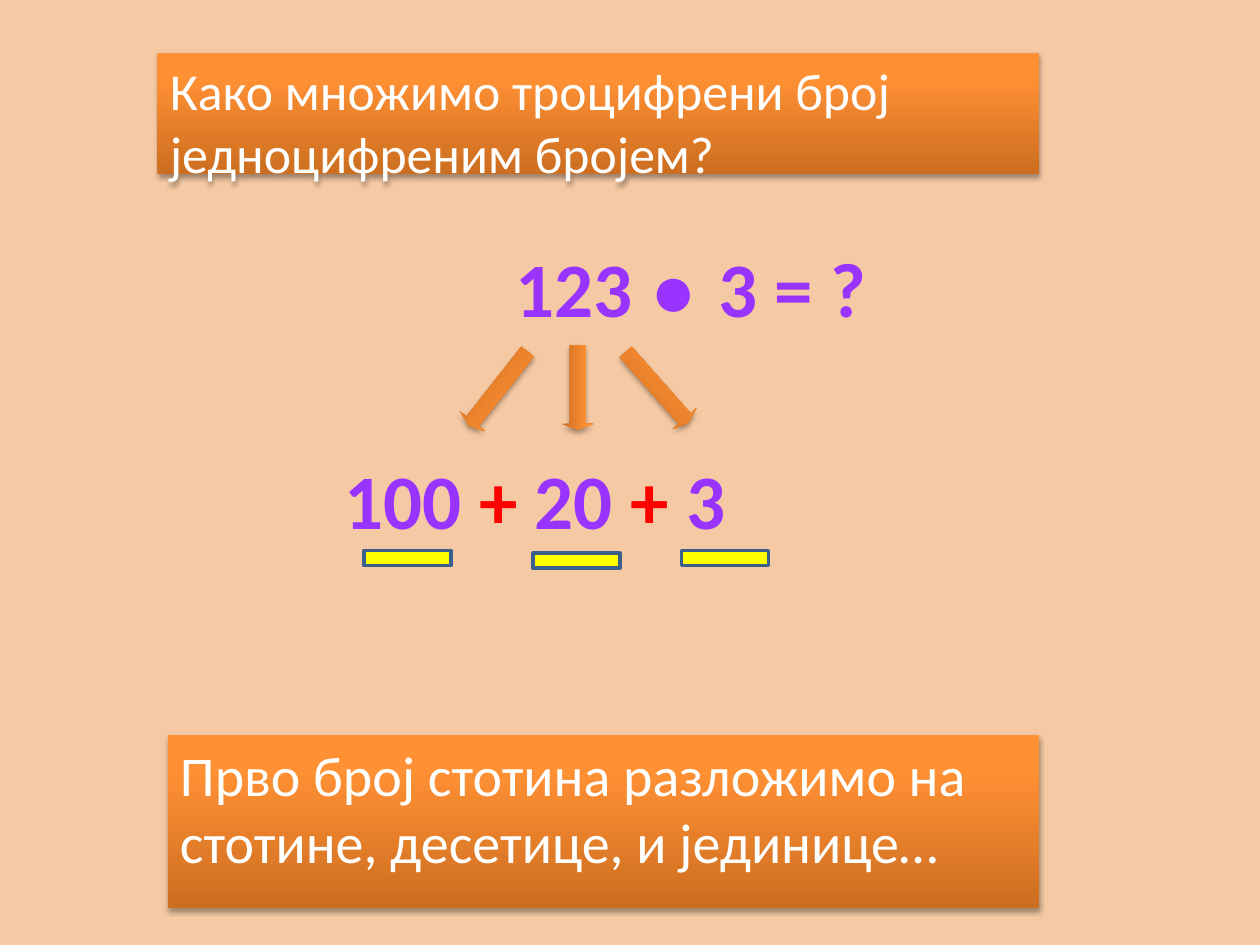
import copy
import pptx
import pptx.util
import pptx.dml.color
import pptx.enum.shapes
import pptx.enum.text
import pptx.oxml
import pptx.oxml.ns

COLORS = {"background": "F5C9A4", "dark": "CC6E20", "orange": "FF9034", "light": "FF9136",
          "white": "FFFFFF", "purple": "9933FF", "red": "FF0000",
          "yellow": "FFFF00", "outline": "3A5F8C"}
RGB = {name: pptx.dml.color.RGBColor.from_string(value) for name, value in COLORS.items()}
SHAPES = pptx.enum.shapes.MSO_SHAPE
SHADOW = (f'<a:effectLst {pptx.oxml.ns.nsdecls("a")}>'
          '<a:outerShdw blurRad="39370" dist="22860" dir="5400000" rotWithShape="0">'
          '<a:srgbClr val="000000"><a:alpha val="35000"/></a:srgbClr>'
          '</a:outerShdw></a:effectLst>')

deck = pptx.Presentation()
deck.slide_width, deck.slide_height = pptx.util.Inches(10), pptx.util.Inches(7.5)
page = deck.slides.add_slide(deck.slide_layouts[6])
page.background.fill.solid()
page.background.fill.fore_color.rgb = RGB["background"]

# The slide is a grid of 10 columns and 7.5 rows
COLUMN, ROW = deck.slide_width / 10, deck.slide_height / 7.5


def place(left, top, width, height):
    return int(left * COLUMN), int(top * ROW), int(width * COLUMN), int(height * ROW)


def add_orange_shape(kind, area):
    """Add a shape with a vertical orange gradient and a soft shadow."""
    shape = page.shapes.add_shape(kind, *place(*area))
    shape.line.fill.background()
    shape.fill.gradient()
    shape.fill.gradient_angle = 90
    stop_list = shape._element.spPr.find(".//" + pptx.oxml.ns.qn("a:gsLst"))
    stop_list.append(copy.deepcopy(stop_list[-1]))
    stops = zip(shape.fill.gradient_stops, (0, 0.8, 1), ("dark", "orange", "light"))
    for stop, position, color in stops:
        stop.position = position
        stop.color.rgb = RGB[color]
    shape._element.spPr.append(pptx.oxml.parse_xml(SHADOW))
    return shape


# Question and explanation boxes
for area, size, text in [
    ((1.33, 5.83, 6.92, 1.38), 32,
     "Прво број стотина разложимо на стотине, десетице, и јединице…"),
    ((1.25, 0.42, 7, 0.96), 29.6,
     "Како множимо троцифрени број једноцифреним бројем?"),
]:
    box = add_orange_shape(SHAPES.RECTANGLE, area)
    frame = box.text_frame
    frame.text = text
    frame.word_wrap = True
    frame.vertical_anchor = pptx.enum.text.MSO_ANCHOR.TOP
    para = frame.paragraphs[0]
    para.alignment = pptx.enum.text.PP_ALIGN.LEFT
    para.space_before = pptx.util.Pt(size * 0.2)
    para.font.name, para.font.size = "Calibri", pptx.util.Pt(size)
    para.font.color.rgb = RGB["white"]

# The product and its expansion: area, left indent, coloured pieces
for area, indent, pieces in [
    ((0.08, 1.65, 9, 1.25), 1.81,
     [("123 ", "purple"), ("● ", "purple"), ("3 = ?", "purple")]),
    ((0.38, 3.33, 7.87, 1.25), 0,
     [("100 ", "purple"), ("+ ", "red"), ("20 ", "purple"), ("+ ", "red"), ("3 ", "purple")]),
]:
    box = page.shapes.add_textbox(*place(*area))
    frame = box.text_frame
    frame.word_wrap = True
    frame.vertical_anchor = pptx.enum.text.MSO_ANCHOR.MIDDLE
    para = frame.paragraphs[0]
    para.alignment = pptx.enum.text.PP_ALIGN.CENTER
    para._p.get_or_add_pPr().set("marL", str(int(indent * COLUMN)))
    for text, color in pieces:
        span = para.add_run()
        span.text = text
        span.font.name = "Arial" if "●" in text else "Calibri"
        span.font.size, span.font.bold = pptx.util.Pt(44), True
        span.font.color.rgb = RGB[color]

# Arrows from each digit to its place value
for left, top, width, angle in [(3.58, 2.96, 0.75, 128.2), (4.84, 2.95, 0.75, 48.5),
                                (4.25, 2.95, 0.67, 90)]:
    arrow = add_orange_shape(SHAPES.RIGHT_ARROW, (left, top, width, 0.25))
    arrow.rotation = angle
    arrow.adjustments[0], arrow.adjustments[1] = 0.5, 0.18

# Yellow underlines
for left, top in [(2.89, 4.37), (4.23, 4.39), (5.41, 4.37)]:
    underline = page.shapes.add_shape(SHAPES.RECTANGLE, *place(left, top, 0.69, 0.12))
    underline.shadow.inherit = False
    underline.fill.solid()
    underline.fill.fore_color.rgb = RGB["yellow"]
    underline.line.color.rgb = RGB["outline"]
    underline.line.width = pptx.util.Pt(2)

deck.save("out.pptx")
